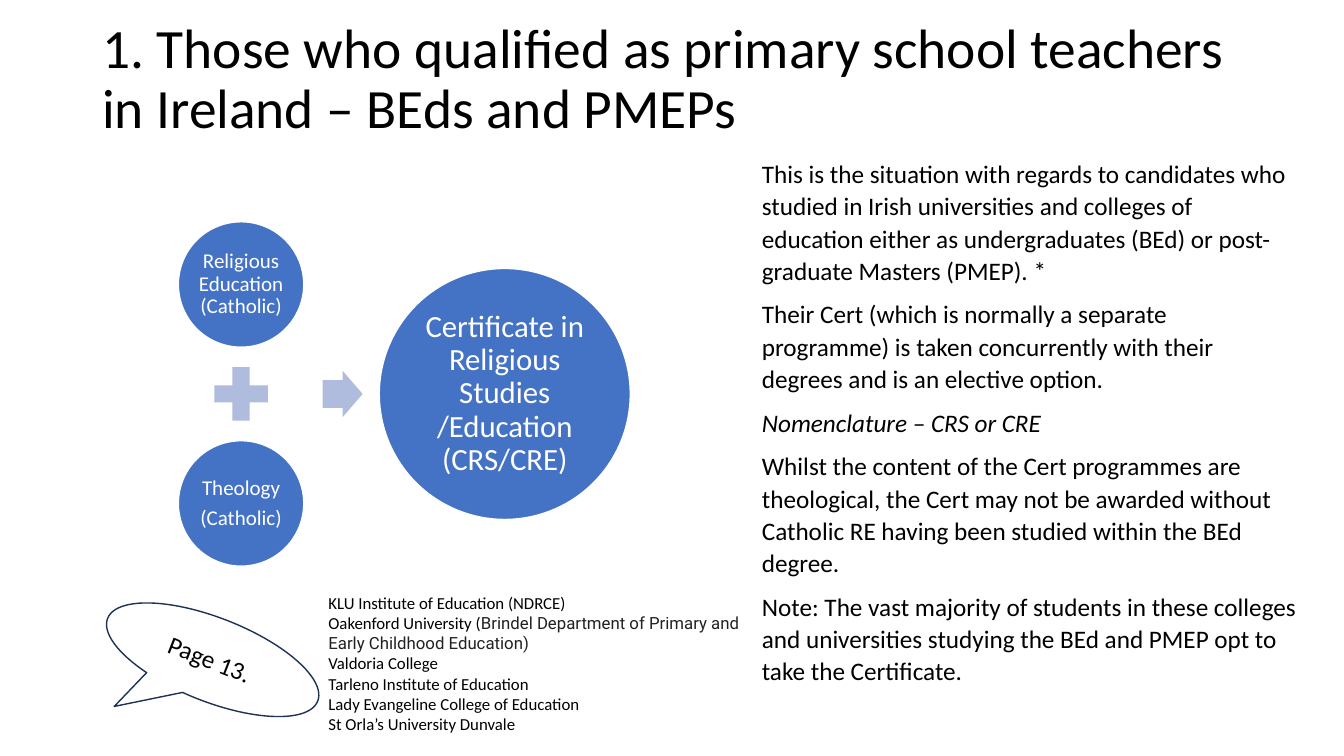
from pptx import Presentation
from pptx.dml.color import RGBColor
from pptx.enum.shapes import MSO_SHAPE
from pptx.enum.text import MSO_ANCHOR, PP_ALIGN
from pptx.util import Pt

OVAL = MSO_SHAPE.OVAL
PLUS = MSO_SHAPE.MATH_PLUS
ARROW = MSO_SHAPE.RIGHT_ARROW
BUBBLE = MSO_SHAPE.OVAL_CALLOUT
MIDDLE = MSO_ANCHOR.MIDDLE
TOP = MSO_ANCHOR.TOP
CENTER = PP_ALIGN.CENTER
LEFT = PP_ALIGN.LEFT

FONT = "Calibri"
BLACK, WHITE, BLUE, PALE, NAVY, GREY = (
    "000000", "FFFFFF", "4472C4", "B0BCDE", "1E3256", "202124")

TITLE = "1. Those who qualified as primary school teachers in Ireland – BEds and PMEPs"
NOTES = [
    "This is the situation with regards to candidates who studied in Irish universities "
    "and colleges of education either as undergraduates (BEd) or post-graduate Masters (PMEP). *",
    "Their Cert (which is normally a separate programme) is taken concurrently with their "
    "degrees and is an elective option.",
    "Nomenclature – CRS or CRE",
    "Whilst the content of the Cert programmes are theological, the Cert may not be awarded "
    "without Catholic RE having been studied within the BEd degree.",
    "Note: The vast majority of students in these colleges and universities studying the BEd "
    "and PMEP opt to take the Certificate.",
]
COLLEGES = [
    "KLU Institute of Education (NDRCE)",
    "Oakenford University (",
    "Valdoria College",
    "Tarleno Institute of Education",
    "Lady Evangeline College of Education",
    "St Orla’s University Dunvale",
]
BRANCH = "Brindel Department of Primary and Early Childhood Education)"


def color(code):
    return RGBColor.from_string(code)


def style(run, size, ink, font=FONT):
    run.font.size = Pt(size)
    run.font.name = font
    run.font.color.rgb = color(ink)


def write(frame, lines, size, ink=BLACK, align=LEFT, anchor=TOP, lead=1.0, after=0):
    frame.word_wrap = True
    frame.vertical_anchor = anchor
    frame.text = "\n".join(lines)
    for para in frame.paragraphs:
        para.alignment = align
        para.line_spacing = lead
        para.space_after = Pt(after)
        for run in para.runs:
            style(run, size, ink)


def text(slide, box, lines, size, **look):
    frame = slide.shapes.add_textbox(*map(Pt, box)).text_frame
    write(frame, lines, size, **look)
    return frame


def shape(slide, kind, box, fill, line=None):
    item = slide.shapes.add_shape(kind, *map(Pt, box))
    item.shadow.inherit = False
    item.fill.solid()
    item.fill.fore_color.rgb = color(fill)
    if line:
        item.line.color.rgb = color(line)
        item.line.width = Pt(1)
    else:
        item.line.fill.background()
    return item


def circle(slide, box, lines, size, inset):
    frame = shape(slide, OVAL, box, BLUE, WHITE).text_frame
    frame.margin_left = frame.margin_right = Pt(inset)
    frame.margin_top = frame.margin_bottom = Pt(inset)
    write(frame, lines, size, WHITE, CENTER, MIDDLE, 0.9, 0.35 * size)


def heading(slide, box):
    frame = text(slide, box, [TITLE], 39.6, anchor=MIDDLE, lead=0.9)
    frame.margin_bottom = Pt(51)


def diagram(slide, box):
    left, top, width, height = box
    small, big, plus = 89.6, 179.3, 52
    mid = top + height / 2
    circle(slide, (left, top, small, small),
           ["Religious Education (Catholic)"], 15, 1.5)
    circle(slide, (left, top + height - small, small, small),
           ["Theology", "(Catholic)"], 15, 1.5)
    shape(slide, PLUS, (left + (small - plus) / 2, mid - plus / 2, plus, plus), PALE)
    arrow = shape(slide, ARROW, (left + 103, mid - 16.6, 28.6, 33.2), PALE)
    arrow.adjustments[0] = 0.6
    arrow.adjustments[1] = 0.5
    circle(slide, (left + width - big, mid - big / 2, big, big),
           ["Certificate in Religious Studies /Education (CRS/CRE)"], 22, 2.2)


def notes(slide, box):
    frame = text(slide, box, NOTES, 18, lead=1.07, after=8)
    frame.paragraphs[2].runs[0].font.italic = True


def callout(slide, box):
    item = shape(slide, BUBBLE, box, WHITE, NAVY)
    item.rotation = 21.5
    item.adjustments[0] = -0.33
    item.adjustments[1] = 0.95
    write(item.text_frame, ["Page 13. "], 18, align=CENTER, anchor=MIDDLE)


def colleges(slide, box):
    frame = text(slide, box, COLLEGES, 12)
    run = frame.paragraphs[1].add_run()
    run.text = BRANCH
    style(run, 12, GREY, "Roboto")


def main():
    deck = Presentation()
    deck.slide_width, deck.slide_height = Pt(960), Pt(540)
    slide = deck.slides.add_slide(deck.slide_layouts[6])
    heading(slide, (66, 28.8, 828, 104.4))
    diagram(slide, (127.4, 158.4, 322.8, 246))
    notes(slide, (537.1, 108, 396.7, 450.7))
    callout(slide, (71.3, 441.4, 161.3, 59.8))
    colleges(slide, (227.5, 419.8, 309.6, 108.7))
    deck.save("out.pptx")


if __name__ == "__main__":
    main()
